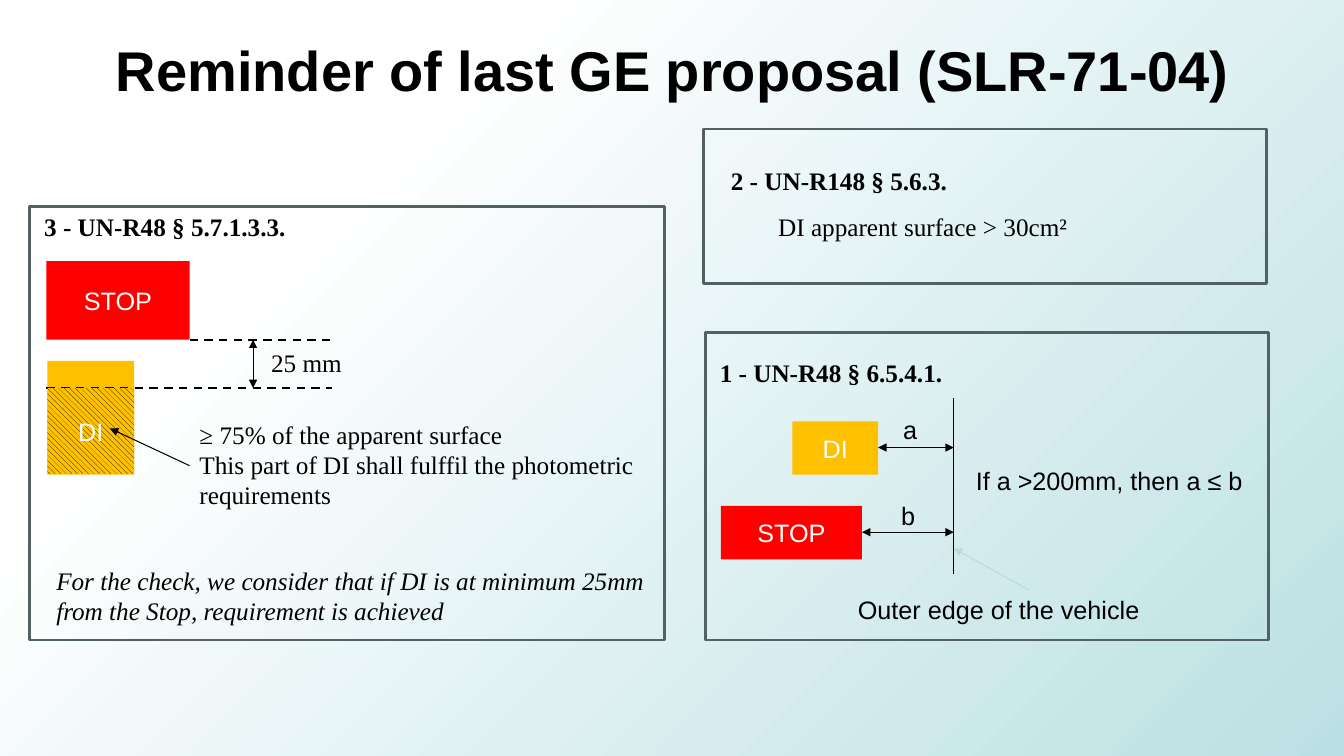
from dataclasses import dataclass

from lxml import etree
from pptx import Presentation
from pptx import util as u
from pptx.dml.color import RGBColor
from pptx.enum import dml, shapes, text
from pptx.oxml import ns


@dataclass(frozen=True)
class Theme:
    """Colours, fonts and sizes of the slide."""
    black: RGBColor = RGBColor(0, 0, 0)
    white: RGBColor = RGBColor(255, 255, 255)
    red: RGBColor = RGBColor(255, 0, 0)
    amber: RGBColor = RGBColor(0xFF, 0xC0, 0)
    pale: RGBColor = RGBColor(0xB6, 0xDC, 0xDF)
    teal: RGBColor = RGBColor(0xBB, 0xE0, 0xE3)
    frame: RGBColor = RGBColor(0x52, 0x62, 0x63)
    sans: str = "Arial"
    serif: str = "Times New Roman"
    head: int = 40
    body: int = 18
    thin: float = 0.75
    dash: float = 1.5
    edge: float = 2


T = Theme()


def paint(slide):
    """Fill the background with a diagonal gradient."""
    fill = slide.background.fill
    fill.gradient()
    fill.gradient_angle = 315
    for stop, place, tint in zip(fill.gradient_stops, (0.25, 1), (T.white, T.teal)):
        stop.position = place
        stop.color.rgb = tint


def style(frame, font, size, color, bold=False, italic=False, align=None):
    """Format every run of a text frame."""
    for para in frame.paragraphs:
        para.alignment = align
        for run in para.runs:
            face = run.font
            face.name, face.size = font, u.Pt(size)
            face.bold, face.italic = bold, italic
            face.color.rgb = color


def label(slide, box, words, font=T.serif, size=T.body, **looks):
    """Add a wrapping text box."""
    frame = slide.shapes.add_textbox(*map(u.Inches, box)).text_frame
    frame.word_wrap = True
    frame.text = words
    style(frame, font, size, T.black, **looks)


def block(slide, box):
    """Add a plain rectangle without shadow."""
    shape = slide.shapes.add_shape(
        shapes.MSO_SHAPE.RECTANGLE, *map(u.Inches, box))
    shape.shadow.inherit = False
    return shape


def lamp(slide, box, color, words="", hatch=False):
    """Add a coloured lamp, hatched if asked, with its name."""
    shape = block(slide, box)
    if hatch:
        shape.fill.patterned()
        shape.fill.pattern = dml.MSO_PATTERN.WIDE_DOWNWARD_DIAGONAL
        shape.fill.fore_color.rgb = T.black
        shape.fill.back_color.rgb = color
    else:
        shape.fill.solid()
        shape.fill.fore_color.rgb = color
    shape.line.fill.background()
    frame = shape.text_frame
    frame.text = words
    frame.vertical_anchor = text.MSO_ANCHOR.MIDDLE
    style(frame, T.sans, T.body, T.white, align=text.PP_ALIGN.CENTER)


def panel(slide, box):
    """Add an outlined panel."""
    shape = block(slide, box)
    shape.fill.background()
    shape.line.color.rgb = T.frame
    shape.line.width = u.Pt(T.edge)


def stroke(slide, ends, color=T.black, width=T.thin, dashed=False, tips=()):
    """Add a line with optional dashes and arrowheads."""
    line = slide.shapes.add_connector(
        shapes.MSO_CONNECTOR.STRAIGHT, *map(u.Inches, ends))
    line.line.color.rgb = color
    line.line.width = u.Pt(width)
    if dashed:
        line.line.dash_style = dml.MSO_LINE.DASH
    for tip in tips:
        etree.SubElement(line.line._ln, ns.qn(f"a:{tip}End"), type="triangle")
    etree.SubElement(line._element.spPr, ns.qn("a:effectLst"))


def edge(slide):
    """Draw the rule on distance to the outer edge."""
    side = 9.46
    lamp(slide, (7.15, 5.02, 1.4, 0.53), T.red, "STOP")
    lamp(slide, (7.86, 4.18, 0.85, 0.53), T.amber, "DI")
    stroke(slide, (side, 3.95, side, 5.69))
    for left, level in ((8.71, 4.44), (8.55, 5.28)):
        stroke(slide, (left, level, side, level), tips=("head", "tail"))
    stroke(slide, (10.2, 5.85, side, 5.44), T.pale, tips=("tail",))
    for box, words in (
        ((8.41, 5.85, 3.13, 0.4), "Outer edge of the vehicle"),
        ((8.86, 4.06, 0.46, 0.4), "a"),
        ((8.84, 4.91, 0.46, 0.4), "b"),
        ((9.58, 4.57, 2.86, 0.4), "If a >200mm, then a ≤ b"),
    ):
        label(slide, box, words, T.sans)
    label(slide, (7.04, 3.5, 2.48, 0.4), "1 - UN-R48 § 6.5.4.1.", bold=True)
    panel(slide, (7, 3.3, 5.58, 3.05))


def area(slide):
    """Write the rule on apparent surface."""
    label(slide, (7.15, 1.59, 3.11, 0.4), "2 - UN-R148 § 5.6.3.", bold=True)
    label(slide, (7.62, 2.05, 3.11, 0.4), "DI apparent surface > 30cm²")
    panel(slide, (6.98, 1.28, 5.58, 1.53))


def gap(slide):
    """Draw the rule on the gap between the lamps."""
    top, low, right = 3.37, 3.85, 3.29
    label(slide, (0.34, 2.05, 2.83, 0.41), "3 - UN-R48 § 5.7.1.3.3.", bold=True)
    lamp(slide, (0.47, 3.58, 0.86, 1.13), T.amber)
    lamp(slide, (0.46, 2.59, 1.42, 0.78), T.red, "STOP")
    for left, level in ((0.46, low), (1.88, top)):
        stroke(slide, (left, level, right, level), width=T.dash, dashed=True)
    stroke(slide, (2.51, top, 2.51, low), tips=("head", "tail"))
    label(slide, (2.59, 3.4, 1.42, 0.41), "25 mm")
    lamp(slide, (0.47, low, 0.86, 0.85), T.amber, "DI", hatch=True)
    stroke(slide, (1.88, 4.62, 1.09, 4.25), tips=("tail",))
    label(slide, (1.88, 4.11, 4.58, 1.03),
          "≥ 75% of the apparent surface\n"
          "This part of DI shall fulffil the photometric requirements")
    panel(slide, (0.29, 2.05, 6.3, 4.3))
    label(slide, (0.46, 5.56, 6.05, 0.71),
          "For the check, we consider that if DI is at minimum 25mm "
          "from the Stop, requirement is achieved", italic=True)


def main():
    """Build and save the slide."""
    deck = Presentation()
    deck.slide_width, deck.slide_height = u.Inches(13.33), u.Inches(7.5)
    slide = deck.slides.add_slide(deck.slide_layouts[6])
    paint(slide)
    label(slide, (0.67, 0.3, 12, 1.25), "Reminder of last GE proposal (SLR-71-04)",
          T.sans, T.head, bold=True, align=text.PP_ALIGN.CENTER)
    edge(slide)
    area(slide)
    gap(slide)
    deck.save("out.pptx")


if __name__ == "__main__":
    main()
